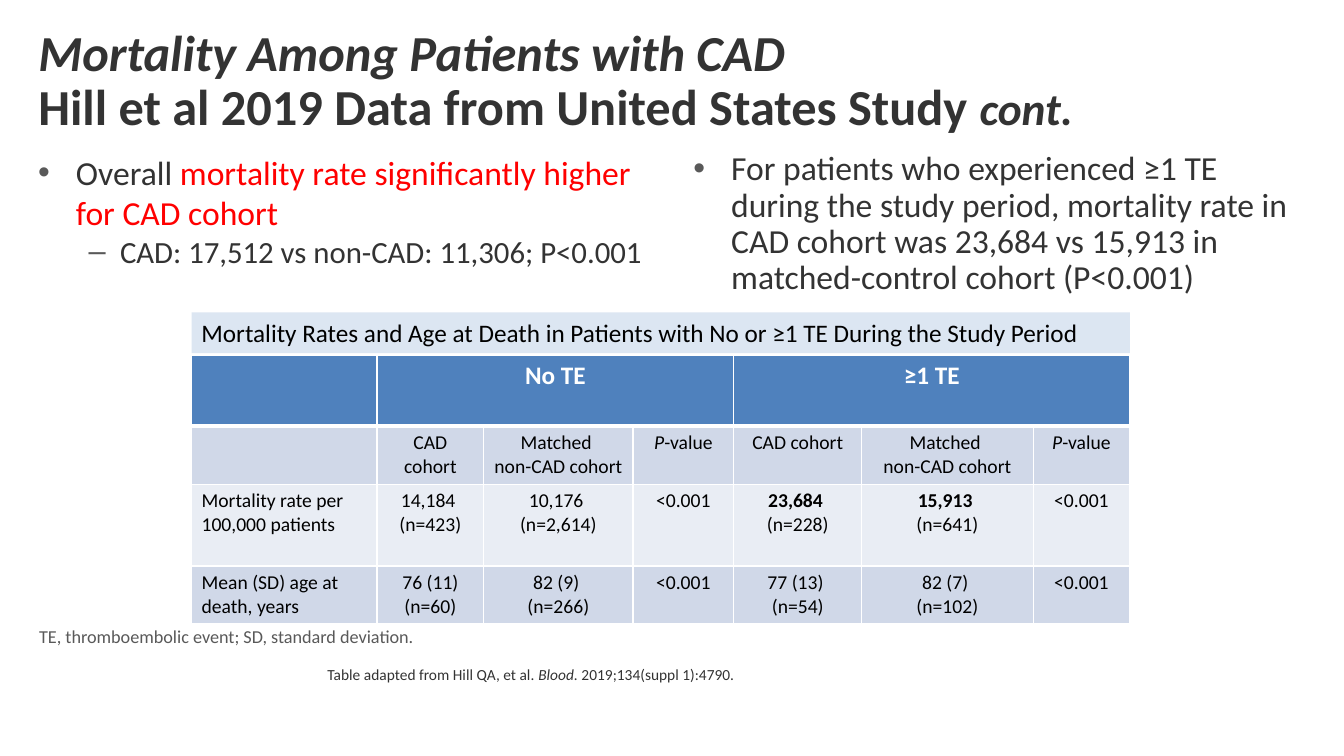
from lxml.etree import SubElement
from pptx import Presentation
from pptx.dml.color import RGBColor
from pptx.enum.shapes import MSO_SHAPE
from pptx.enum.text import MSO_ANCHOR, MSO_AUTO_SIZE, PP_ALIGN
from pptx.oxml.ns import qn
from pptx.util import Pt


def color(value):
    return RGBColor.from_string(value)


class SlideBuilder:
    font = "Calibri"
    ink = "333333"
    gray = "595959"
    white = "FFFFFF"
    black = "000000"

    def __init__(self, slide):
        self.slide = slide

    def place(self, shape, box):
        shape.left, shape.top, shape.width, shape.height = map(Pt, box)

    def runs(self, paragraph, parts, size, ink):
        for text, style in parts:
            for index, line in enumerate(text.split("\n")):
                if index:
                    paragraph.add_line_break()
                if not line:
                    continue
                run = paragraph.add_run()
                run.text = line
                font = run.font
                font.name = self.font
                font.size = Pt(style.get("size", size))
                font.bold = style.get("bold", False)
                font.italic = style.get("italic", False)
                font.color.rgb = color(style.get("ink", ink))

    def title(self, box, parts, size):
        title = self.slide.shapes.title
        self.place(title, box)
        frame = title.text_frame
        frame.word_wrap = True
        frame.auto_size = MSO_AUTO_SIZE.NONE
        frame.vertical_anchor = MSO_ANCHOR.MIDDLE
        paragraph = frame.paragraphs[0]
        paragraph.alignment = PP_ALIGN.LEFT
        paragraph.line_spacing = 0.9
        self.runs(paragraph, parts, size, self.ink)

    def text(self, box, parts, size, ink, spacing=0.9):
        frame = self.slide.shapes.add_textbox(*map(Pt, box)).text_frame
        frame.word_wrap = True
        paragraph = frame.paragraphs[0]
        paragraph.line_spacing = spacing
        self.runs(paragraph, parts, size, ink)
        return frame

    def bullet(self, paragraph, mark, margin, hanging):
        properties = paragraph._p.get_or_add_pPr()
        properties.set("marL", str(Pt(margin)))
        properties.set("indent", str(-Pt(hanging)))
        tint = SubElement(properties, qn("a:buClr"))
        SubElement(tint, qn("a:srgbClr"), val=self.gray)
        SubElement(properties, qn("a:buFont"), typeface="Arial")
        SubElement(properties, qn("a:buChar"), char=mark)

    def bar(self, box, text, size, fill):
        bar = self.slide.shapes.add_shape(MSO_SHAPE.RECTANGLE, *map(Pt, box))
        bar.shadow.inherit = False
        bar.fill.solid()
        bar.fill.fore_color.rgb = color(fill)
        bar.line.fill.background()
        bar.text_frame.word_wrap = True
        paragraph = bar.text_frame.paragraphs[0]
        paragraph.alignment = PP_ALIGN.LEFT
        self.runs(paragraph, [(text, {})], size, self.black)

    def borders(self, cell, widths):
        properties = cell._tc.get_or_add_tcPr()
        for side, width in zip("LRTB", widths):
            line = SubElement(properties, qn(f"a:ln{side}"), w=str(Pt(width)))
            fill = SubElement(line, qn("a:solidFill"))
            SubElement(fill, qn("a:srgbClr"), val=self.white)

    def table(self, left, top, widths, heights, rows, fills):
        table = self.slide.shapes.add_table(
            len(rows), len(widths), Pt(left), Pt(top), Pt(sum(widths)), Pt(sum(heights))
        ).table
        table.first_row = table.horz_banding = False
        for column, width in zip(table.columns, widths):
            column.width = Pt(width)
        for r, (height, row, fill) in enumerate(zip(heights, rows, fills)):
            table.rows[r].height = Pt(height)
            size, ink = (18, self.white) if r == 0 else (14, self.black)
            for c, parts in enumerate(row):
                cell = table.cell(r, c)
                self.borders(cell, (1, 1, 3 if r == 1 else 1, 3 if r == 0 else 1))
                cell.fill.solid()
                cell.fill.fore_color.rgb = color(fill)
                paragraph = cell.text_frame.paragraphs[0]
                paragraph.alignment = PP_ALIGN.CENTER if c else PP_ALIGN.LEFT
                paragraph.font.size = Pt(size)
                self.runs(paragraph, parts, size, ink)
        for first in (1, 4):
            table.cell(0, first).merge(table.cell(0, first + 2))


def plain(*texts):
    return [[(text, {})] for text in texts]


def main():
    deck = Presentation()
    deck.slide_width, deck.slide_height = Pt(960), Pt(540)
    builder = SlideBuilder(deck.slides.add_slide(deck.slide_layouts[5]))
    bold, italic = {"bold": True}, {"italic": True}

    builder.title((20.2, 13.7, 920, 90), [
        ("Mortality Among Patients with CAD \n", {**bold, **italic}),
        ("Hill et al 2019 Data from United States Study ", bold),
        ("cont.", {**bold, **italic, "size": 32.4}),
    ], 36)

    overall = builder.text((20.2, 105, 452, 340), [
        ("Overall ", {}),
        ("mortality rate significantly higher for CAD cohort", {"ink": "FF0000"}),
    ], 24, builder.ink, 1)
    builder.bullet(overall.paragraphs[0], "•", 27, 27)
    cohort_rates = overall.add_paragraph()
    builder.bullet(cohort_rates, "–", 58.5, 22.5)
    builder.runs(cohort_rates, [("CAD: 17,512 vs non-CAD: 11,306; P<0.001", {})], 22, builder.ink)

    experienced_te = builder.text((488.2, 105, 452, 340), [(
        "For patients who experienced ≥1 TE during the study period, mortality rate in "
        "CAD cohort was 23,684 vs 15,913 in matched-control cohort (P<0.001)", {},
    )], 24, builder.ink)
    builder.bullet(experienced_te.paragraphs[0], "•", 27, 27)

    builder.text((20.9, 445, 920, 21.6),
                 [("TE, thromboembolic event; SD, standard deviation.", {})], 13, builder.gray)
    builder.text((226.8, 473, 714, 57.6), [
        ("Table adapted from Hill QA, et al. ", {}),
        ("Blood. ", italic),
        ("2019;134(suppl 1):4790.", {}),
    ], 11, builder.ink)

    cohort_heads = plain("CAD cohort", "Matched \nnon-CAD cohort") + [[("P", italic), ("-value", {})]]
    p_value = plain("<0.001")
    rows = [
        [[], *plain("No TE"), [], [], *plain("≥1 TE"), [], []],
        [[], *cohort_heads, *cohort_heads],
        plain("Mortality rate per 100,000 patients", "14,184 \n(n=423)", "10,176 \n(n=2,614)")
        + p_value
        + [[("23,684 \n", bold), ("(n=228)", {})], [("15,913 \n", bold), ("(n=641)", {})]]
        + p_value,
        plain("Mean (SD) age at death, years", "76 (11) (n=60)", "82 (9) \n(n=266)")
        + p_value + plain("77 (13) \n(n=54)", "82 (7) \n(n=102)") + p_value,
    ]
    for heading in (rows[0][1], rows[0][4]):
        heading[0] = (heading[0][0], bold)
    builder.table(136.8, 254, (132.5, 76.3, 106.6, 72, 91.4, 122.4, 69.1),
                  (50.4, 41.4, 58.5, 41.4), rows, ("4F81BD", "D0D8E8", "E9EDF4", "D0D8E8"))
    builder.bar((136.8, 223.2, 670.3, 29.1),
                "Mortality Rates and Age at Death in Patients with No or ≥1 TE During the Study Period",
                18, "DCE6F2")
    deck.save("out.pptx")


if __name__ == "__main__":
    main()
